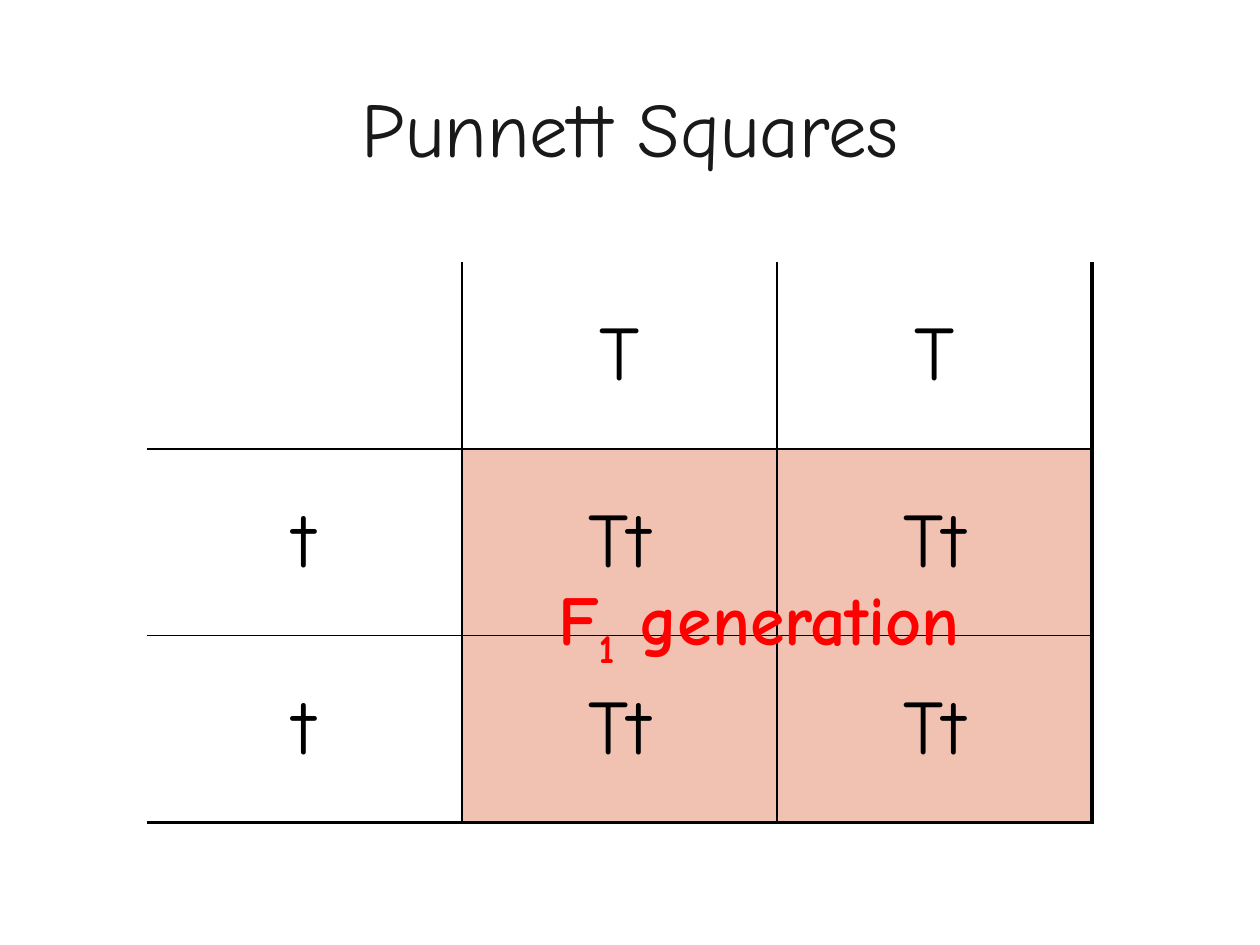
from lxml import etree
from pptx import Presentation
from pptx.dml.color import RGBColor
from pptx.enum import text
from pptx.oxml.ns import qn
from pptx.util import Cm, Pt

FONT = "Comic Neue"
BLACK, TITLE, RED, PINK = "000000", "191919", "FF0000", "F1C2B1"
GENOTYPES = [["", "T", "T"],
             ["t", "Tt", "Tt"],
             ["t", "Tt", "Tt"]]
INNER, OUTER = 1, 2.25


def rgb(hex_color):
    return RGBColor.from_string(hex_color)


def style(font, size, color, bold=False):
    font.name, font.size, font.bold = FONT, Pt(size), bold
    font.color.rgb = rgb(color)


def set_borders(cell, widths):
    """Draw the left, right, top and bottom borders; a width of 0 hides one."""
    tcPr = cell._tc.get_or_add_tcPr()
    for i, (side, width) in enumerate(zip("LRTB", widths)):
        ln = etree.Element(qn(f"a:ln{side}"), w=str(Pt(width)))
        if width:
            fill = etree.SubElement(ln, qn("a:solidFill"))
            etree.SubElement(fill, qn("a:srgbClr"), val=BLACK)
        else:
            etree.SubElement(ln, qn("a:noFill"))
        tcPr.insert(i, ln)


def add_title(s, x, y, w, h):
    tf = s.shapes.add_textbox(x, y, w, h).text_frame
    tf.word_wrap = True
    tf.vertical_anchor = text.MSO_ANCHOR.MIDDLE
    tf.text = "Punnett Squares"
    p = tf.paragraphs[0]
    p.alignment = text.PP_ALIGN.CENTER
    style(p.runs[0].font, 44, TITLE)


def add_punnett_square(s, x, y, w, h):
    n = len(GENOTYPES)
    table = s.shapes.add_table(n, n, x, y, w, h).table
    table.first_row = table.horz_banding = False
    for i, row in enumerate(GENOTYPES):
        table.rows[i].height = h // n
        table.columns[i].width = w // n
        for j, genotype in enumerate(row):
            cell = table.cell(i, j)
            cell.vertical_anchor = text.MSO_ANCHOR.MIDDLE
            if i and j:
                cell.fill.solid()
                cell.fill.fore_color.rgb = rgb(PINK)
            else:
                cell.fill.background()
            set_borders(cell, (INNER if j else 0,
                               INNER if j < n - 1 else OUTER,
                               INNER if i else 0,
                               INNER if i < n - 1 else OUTER))
            cell.text = genotype
            p = cell.text_frame.paragraphs[0]
            p.alignment = text.PP_ALIGN.CENTER
            style(p.font, 44, BLACK)
            for r in p.runs:
                style(r.font, 44, BLACK)


def add_generation_label(s, x, y, w, h):
    tf = s.shapes.add_textbox(x, y, w, h).text_frame
    tf.word_wrap = False
    tf.auto_size = text.MSO_AUTO_SIZE.SHAPE_TO_FIT_TEXT
    p = tf.paragraphs[0]
    for part in ("F", "1", " generation"):
        r = p.add_run()
        r.text = part
        style(r.font, 40, RED, bold=True)
    p.runs[1]._r.get_or_add_rPr().set("baseline", "-25000")


def main():
    prs = Presentation()
    prs.slide_width, prs.slide_height = Cm(25.4), Cm(19.05)
    s = prs.slides.add_slide(prs.slide_layouts[6])
    add_title(s, Cm(1.88), Cm(0.53), Cm(21.67), Cm(4.06))
    add_punnett_square(s, Cm(2.96), Cm(5.29), Cm(19.05), Cm(11.29))
    add_generation_label(s, Cm(11), Cm(11.48), Cm(9.63), Cm(1.96))
    prs.save("out.pptx")


if __name__ == "__main__":
    main()
